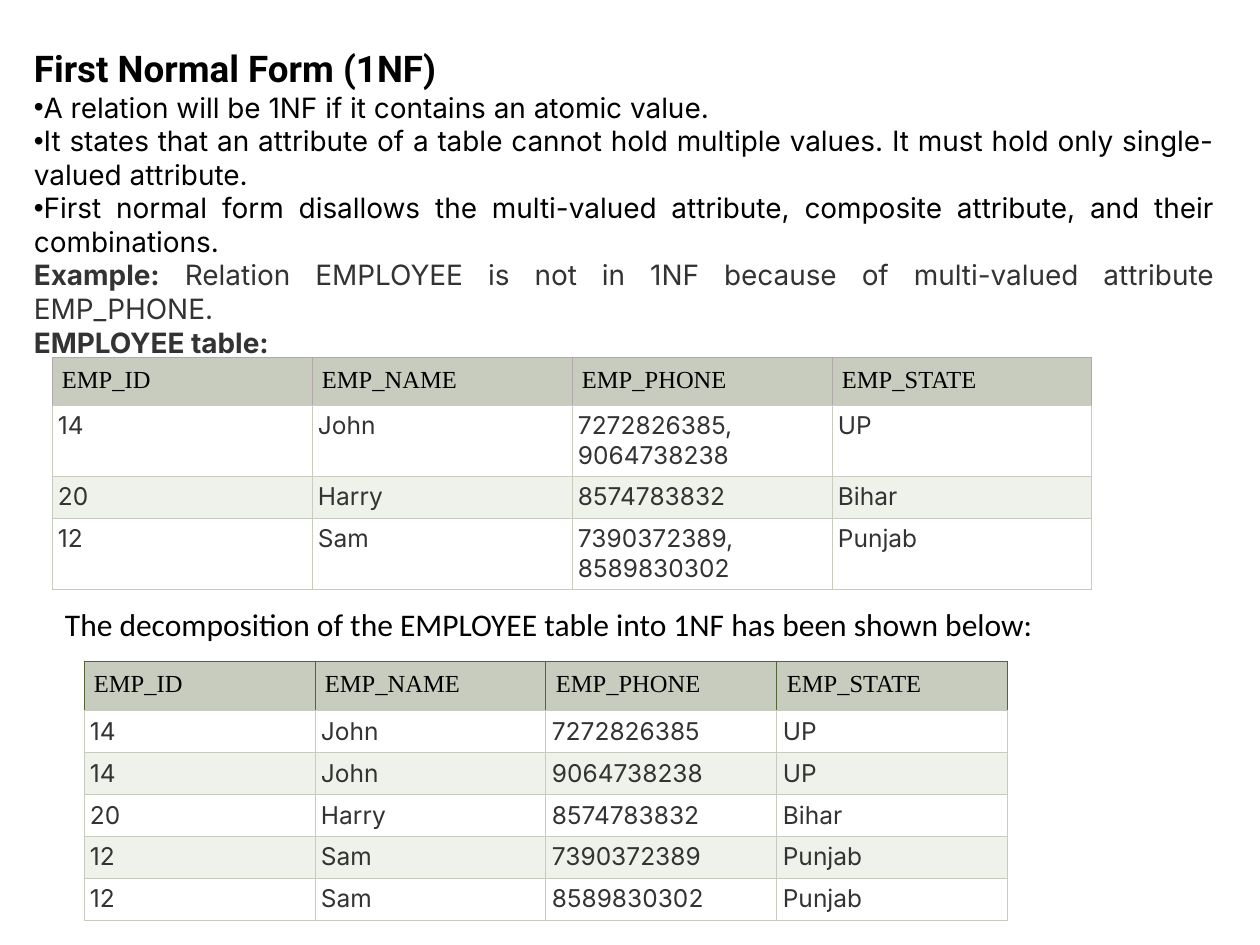
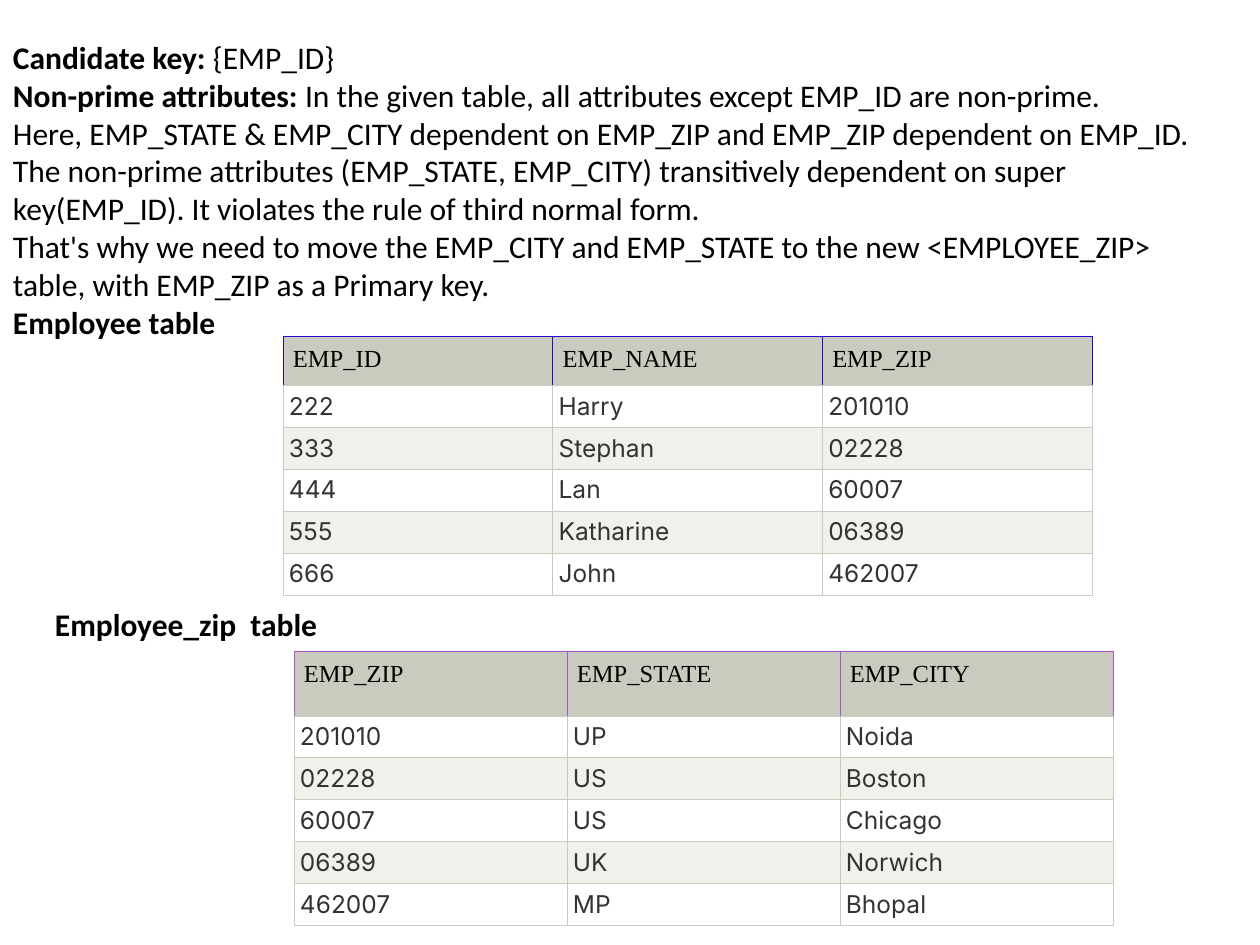
from dataclasses import dataclass

from lxml.etree import SubElement
from pptx import Presentation
from pptx.dml.color import RGBColor as RGB
from pptx.enum.shapes import MSO_SHAPE as Shape
from pptx.enum.text import MSO_ANCHOR as Anchor, PP_ALIGN as Align
from pptx.oxml.ns import qn
from pptx.util import Pt


@dataclass(frozen=True)
class Theme:
    ink: str = "000000"
    soft_ink: str = "333333"
    paper: str = "FFFFFF"
    band: str = "EFF1EB"
    head: str = "C7CCBE"
    title_font: str = "Roboto"
    body_font: str = "Inter"
    note_font: str = "Calibri"
    head_font: str = "Times New Roman"
    title_size: int = 21
    note_size: int = 18
    body_size: int = 16
    cell_size: int = 14
    rule: float = 0.6


T = Theme()
TITLE = (T.title_font, T.title_size, T.ink)
POINT = (T.body_font, T.body_size, T.ink)
EXAMPLE = (T.body_font, T.body_size, T.soft_ink)
NOTE = (T.note_font, T.note_size, T.ink)
HEAD = (T.head_font, T.cell_size, T.ink)
CELL = (T.body_font, T.cell_size, T.soft_ink)

FIRST_FORM = [
    (TITLE, "", [("First Normal Form (1NF)", True)]),
    (POINT, "•", [("A relation will be 1NF if it contains an atomic value.", False)]),
    (POINT, "•", [("It states that an attribute of a table cannot hold multiple values. "
                   "It must hold only single-valued attribute.", False)]),
    (POINT, "•", [("First normal form disallows the multi-valued attribute, "
                   "composite attribute, and their combinations.", False)]),
    (EXAMPLE, "", [("Example:", True),
                   (" Relation EMPLOYEE is not in 1NF because of multi-valued "
                    "attribute EMP_PHONE.", False)]),
    (EXAMPLE, "", [("EMPLOYEE table:", True)]),
]
DECOMPOSITION = [
    (NOTE, "", [("The decomposition of the EMPLOYEE table into 1NF has been shown below:", False)]),
]
THIRD_FORM = [
    (NOTE, "", [("Candidate key:", True), (" {EMP_ID}", False)]),
    (NOTE, "", [("Non-prime attributes:", True),
                (" In the given table, all attributes except EMP_ID are non-prime.", False)]),
    (NOTE, "", [("Here, EMP_STATE & EMP_CITY dependent on EMP_ZIP and EMP_ZIP dependent on "
                 "EMP_ID. The non-prime attributes (EMP_STATE, EMP_CITY) transitively dependent "
                 "on super key(EMP_ID). It violates the rule of third normal form.", False)]),
    (NOTE, "", [("That's why we need to move the EMP_CITY and EMP_STATE to the new "
                 "<EMPLOYEE_ZIP> table, with EMP_ZIP as a Primary key.", False)]),
    (NOTE, "", [("Employee table", True)]),
]
ZIP_CAPTION = [(NOTE, "", [("Employee_zip  table", True)])]

PHONE_HEAD = ("EMP_ID", "EMP_NAME", "EMP_PHONE", "EMP_STATE")
EMPLOYEE = [
    PHONE_HEAD,
    ("14", "John", "7272826385,\n9064738238", "UP"),
    ("20", "Harry", "8574783832", "Bihar"),
    ("12", "Sam", "7390372389,\n8589830302", "Punjab"),
]
EMPLOYEE_1NF = [
    PHONE_HEAD,
    ("14", "John", "7272826385", "UP"),
    ("14", "John", "9064738238", "UP"),
    ("20", "Harry", "8574783832", "Bihar"),
    ("12", "Sam", "7390372389", "Punjab"),
    ("12", "Sam", "8589830302", "Punjab"),
]
EMPLOYEE_3NF = [
    ("EMP_ID", "EMP_NAME", "EMP_ZIP"),
    ("222", "Harry", "201010"),
    ("333", "Stephan", "02228"),
    ("444", "Lan", "60007"),
    ("555", "Katharine", "06389"),
    ("666", "John", "462007"),
]
EMPLOYEE_ZIP = [
    ("EMP_ZIP", "EMP_STATE", "EMP_CITY"),
    ("201010", "UP", "Noida"),
    ("02228", "US", "Boston"),
    ("60007", "US", "Chicago"),
    ("06389", "UK", "Norwich"),
    ("462007", "MP", "Bhopal"),
]


def px(length):
    return round(length * 914400 / 126)


def write_run(paragraph, words, style, bold=False):
    run = paragraph.add_run()
    run.text = words
    font = run.font
    font.name, size, colour = style
    font.size = Pt(size)
    font.bold = bold
    font.color.rgb = RGB.from_string(colour)


def write_text(frame, content, align, insets):
    frame.word_wrap = True
    frame.vertical_anchor = Anchor.TOP
    frame.margin_left, frame.margin_top, frame.margin_right, frame.margin_bottom = map(px, insets)
    for index, (style, bullet, runs) in enumerate(content):
        paragraph = frame.add_paragraph() if index else frame.paragraphs[0]
        paragraph.alignment = align
        if bullet:
            props = paragraph._p.get_or_add_pPr()
            props.set("marL", "0")
            props.set("indent", "0")
            SubElement(props, qn("a:buFont"), typeface="Arial")
            SubElement(props, qn("a:buChar"), char=bullet)
        for words, bold in runs:
            write_run(paragraph, words, style, bold)


def add_panel(slide, content, box):
    panel = slide.shapes.add_shape(Shape.RECTANGLE, *map(px, box))
    panel.shadow.inherit = False
    panel.fill.solid()
    panel.fill.fore_color.rgb = RGB.from_string(T.paper)
    panel.line.fill.background()
    write_text(panel.text_frame, content, Align.JUSTIFY, (13, 36, 13, 0))


def add_note(slide, content, box):
    note = slide.shapes.add_textbox(*map(px, box))
    write_text(note.text_frame, content, Align.LEFT, (13, 6, 13, 6))


def set_borders(cell, colours):
    props = cell._tc.get_or_add_tcPr()
    for index, (side, colour) in enumerate(zip("LRTB", colours)):
        line = props.makeelement(qn(f"a:ln{side}"), {"w": str(Pt(T.rule))})
        fill = SubElement(line, qn("a:solidFill"))
        SubElement(fill, qn("a:srgbClr"), val=colour)
        props.insert(index, line)


def add_relation(slide, rows, left, top, width, head_height, head_rule):
    heights = [head_height] + [71 if "\n" in "".join(row) else 42 for row in rows[1:]]
    relation = slide.shapes.add_table(len(rows), len(rows[0]), px(left), px(top),
                                      px(width), px(sum(heights))).table
    for column in relation.columns:
        column.width = px(width / len(rows[0]))
    for r, (row, height) in enumerate(zip(rows, heights)):
        relation.rows[r].height = px(height)
        is_head = r == 0
        style, inset = (HEAD, 10) if is_head else (CELL, 6)
        ground = T.head if is_head else (T.paper if r % 2 else T.band)
        rule = head_rule if is_head else T.head
        for c, value in enumerate(row):
            cell = relation.cell(r, c)
            cell.margin_left = cell.margin_right = px(inset)
            cell.margin_top = cell.margin_bottom = px(inset)
            cell.fill.solid()
            cell.fill.fore_color.rgb = RGB.from_string(ground)
            set_borders(cell, (rule, rule, T.head if r == 1 else rule, T.head))
            paragraph = cell.text_frame.paragraphs[0]
            paragraph.alignment = Align.LEFT if is_head else Align.JUSTIFY
            for index, line in enumerate(value.split("\n")):
                if index:
                    paragraph.add_line_break()
                write_run(paragraph, line, style)


def build_first_form(slide):
    add_relation(slide, EMPLOYEE, 52, 357, 1040, 48, "B0A8AA")
    add_panel(slide, FIRST_FORM, (21, 10, 1207, 338))
    add_note(slide, DECOMPOSITION, (52, 599, 1008, 50))
    add_relation(slide, EMPLOYEE_1NF, 84, 661, 924, 48, "506733")


def build_third_form(slide):
    add_note(slide, THIRD_FORM, (0, 32, 1228, 318))
    add_relation(slide, EMPLOYEE_3NF, 283, 336, 809, 48, "3004CC")
    add_relation(slide, EMPLOYEE_ZIP, 294, 651, 819, 65, "B055C9")
    add_note(slide, ZIP_CAPTION, (42, 599, 290, 50))


def main():
    deck = Presentation()
    deck.slide_width, deck.slide_height = px(1260), px(945)
    for build in (build_first_form, build_third_form):
        build(deck.slides.add_slide(deck.slide_layouts[6]))
    deck.save("out.pptx")


if __name__ == "__main__":
    main()
